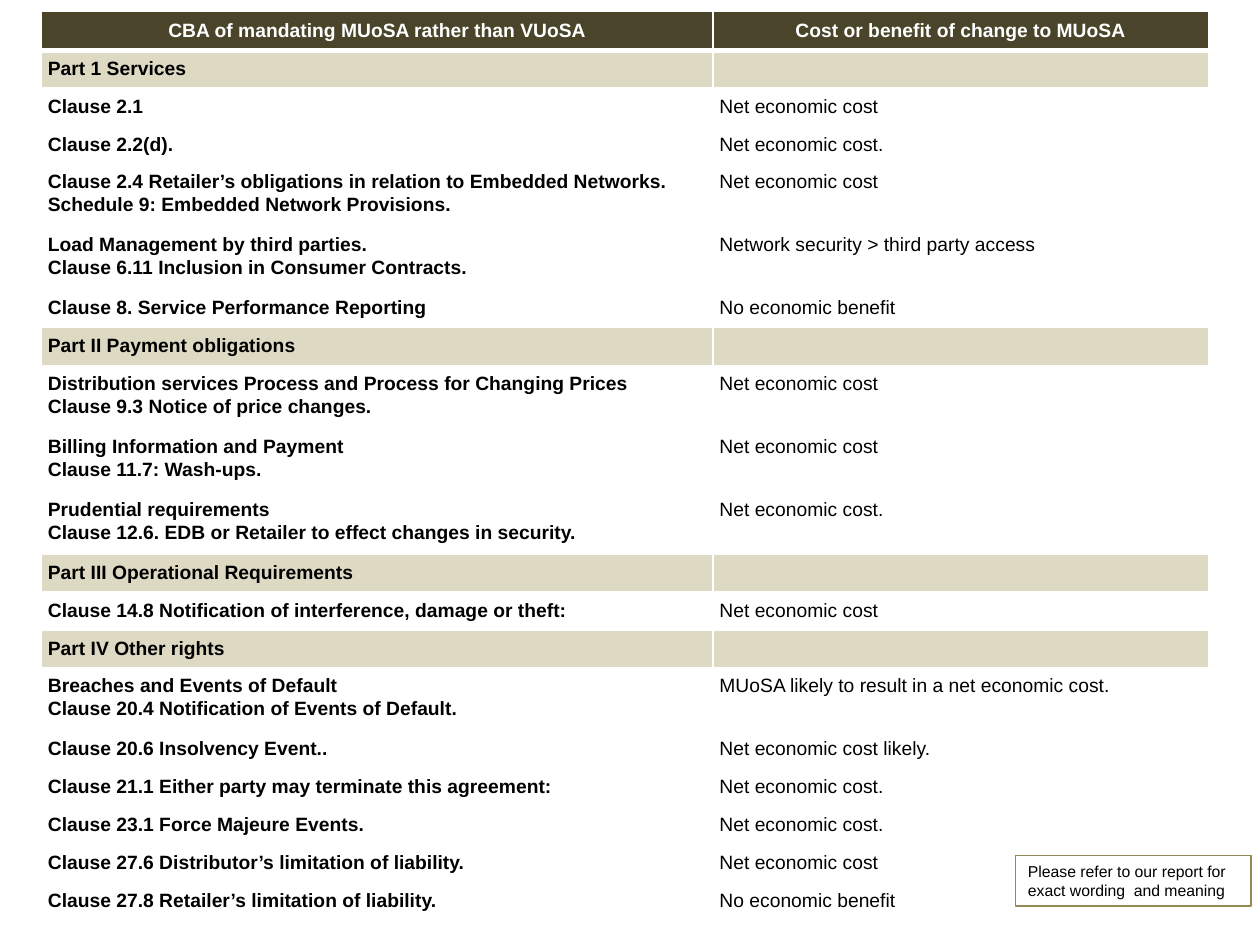
import dataclasses
import typing

import pptx
import pptx.dml.color
import pptx.enum.shapes
import pptx.enum.text
import pptx.oxml.ns
import pptx.util
from lxml import etree

Inches = pptx.util.Inches
Pt = pptx.util.Pt
ALIGN = pptx.enum.text.PP_ALIGN
ANCHOR = pptx.enum.text.MSO_ANCHOR

COLOURS = {
    "header": "4A452A",
    "section": "DDD9C3",
    "white": "FFFFFF",
    "text": "000000",
    "note_line": "948A54",
}
COLUMN_WIDTHS = [5.33, 3.93]
LINE_HEIGHTS = {1: 0.3, 2: 0.5}
HEADER_HEIGHT = 0.31


@dataclasses.dataclass
class Row:
    lines: list[str]
    finding: str = ""
    kind: str = "clause"


@dataclasses.dataclass
class CellStyle:
    fill: str
    text: str = "text"
    bold: bool = True
    align: typing.Any = ALIGN.LEFT
    anchor: typing.Any = ANCHOR.TOP
    bottom_inset: float = 0.05


ROWS = [
    Row(["CBA of mandating MUoSA rather than VUoSA"], "Cost or benefit of change to MUoSA", "header"),
    Row(["Part 1 Services"], kind="section"),
    Row(["Clause 2.1"], "Net economic cost"),
    Row(["Clause 2.2(d)."], "Net economic cost."),
    Row(["Clause 2.4 Retailer’s obligations in relation to Embedded Networks.",
         "Schedule 9: Embedded Network Provisions."], "Net economic cost"),
    Row(["Load Management by third parties.",
         "Clause 6.11 Inclusion in Consumer Contracts."], "Network security > third party access"),
    Row(["Clause 8. Service Performance Reporting"], "No economic benefit"),
    Row(["Part II Payment obligations"], kind="section"),
    Row(["Distribution services Process and Process for Changing Prices",
         "Clause 9.3 Notice of price changes."], "Net economic cost"),
    Row(["Billing Information and Payment", "Clause 11.7: Wash-ups."], "Net economic cost"),
    Row(["Prudential requirements",
         "Clause 12.6. EDB or Retailer to effect changes in security."], "Net economic cost."),
    Row(["Part III Operational Requirements"], kind="section"),
    Row(["Clause 14.8 Notification of interference, damage or theft:"], "Net economic cost"),
    Row(["Part IV Other rights"], kind="section"),
    Row(["Breaches and Events of Default", "Clause 20.4 Notification of Events of Default."],
        "MUoSA likely to result in a net economic cost."),
    Row(["Clause 20.6 Insolvency Event.."], "Net economic cost likely."),
    Row(["Clause 21.1 Either party may terminate this agreement:"], "Net economic cost."),
    Row(["Clause 23.1 Force Majeure Events."], "Net economic cost."),
    Row(["Clause 27.6 Distributor’s limitation of liability."], "Net economic cost"),
    Row(["Clause 27.8 Retailer’s limitation of liability."], "No economic benefit"),
]


def set_all(target: typing.Any, values: dict[str, typing.Any]) -> None:
    for name, value in values.items():
        setattr(target, name, value)


def colour(name: str) -> pptx.dml.color.RGBColor:
    return pptx.dml.color.RGBColor.from_string(COLOURS[name])


def add_span(para: typing.Any, text: str, size: float, shade: str, bold: bool) -> None:
    span = para.add_run()
    span.text = text
    set_all(span.font, {"name": "Arial", "size": Pt(size), "bold": bold})
    span.font.color.rgb = colour(shade)


def add_borders(cell: typing.Any, top: float, bottom: float) -> None:
    qn = pptx.oxml.ns.qn
    properties = cell._tc.get_or_add_tcPr()
    for side, width in {"L": 1, "R": 1, "T": top, "B": bottom}.items():
        line = etree.SubElement(properties, qn(f"a:ln{side}"), w=str(Pt(width)))
        fill = etree.SubElement(line, qn("a:solidFill"))
        etree.SubElement(fill, qn("a:srgbClr"), val=COLOURS["white"])


def fill_cell(cell: typing.Any, lines: list[str], style: CellStyle) -> None:
    set_all(cell, {
        "margin_left": Inches(0.05),
        "margin_right": Inches(0.05),
        "margin_top": Inches(0.05),
        "margin_bottom": Inches(style.bottom_inset),
        "vertical_anchor": style.anchor,
    })
    cell.fill.solid()
    cell.fill.fore_color.rgb = colour(style.fill)
    frame = cell.text_frame
    for index, text in enumerate(lines):
        para = frame.add_paragraph() if index else frame.paragraphs[0]
        set_all(para, {"alignment": style.align, "line_spacing": Pt(13)})
        if text:
            add_span(para, text, 11, style.text, style.bold)
        else:
            etree.SubElement(para._p, pptx.oxml.ns.qn("a:endParaRPr"), sz="1100")


def cell_style(kind: str, column: int) -> CellStyle:
    if kind == "header":
        return CellStyle("header", "white", True, ALIGN.CENTER, ANCHOR.MIDDLE, 0.06)
    if kind == "section":
        return CellStyle("section")
    return CellStyle("white", bold=column == 0)


def add_clause_table(page: typing.Any) -> None:
    heights = [HEADER_HEIGHT if row.kind == "header" else LINE_HEIGHTS[len(row.lines)] for row in ROWS]
    table = page.shapes.add_table(
        len(ROWS), len(COLUMN_WIDTHS), Inches(0.33), Inches(0.09),
        Inches(sum(COLUMN_WIDTHS)), Inches(sum(heights))).table
    for column, width in zip(table.columns, COLUMN_WIDTHS):
        column.width = Inches(width)
    for index, (row, height) in enumerate(zip(ROWS, heights)):
        table.rows[index].height = Inches(height)
        for column, lines in enumerate([row.lines, [row.finding]]):
            cell = table.cell(index, column)
            add_borders(cell, 3 if index == 1 else 1, 3 if index == 0 else 1)
            fill_cell(cell, lines, cell_style(row.kind, column))


def add_note(page: typing.Any, text: str) -> None:
    box = page.shapes.add_shape(
        pptx.enum.shapes.MSO_SHAPE.RECTANGLE, Inches(8.06), Inches(6.79), Inches(1.87), Inches(0.4))
    box.shadow.inherit = False
    box.fill.background()
    box.line.color.rgb = colour("note_line")
    box.line.width = Pt(0.75)
    set_all(box.text_frame, {"word_wrap": True, "vertical_anchor": ANCHOR.TOP})
    para = box.text_frame.paragraphs[0]
    para.alignment = ALIGN.LEFT
    add_span(para, text, 9, "text", False)


def main() -> None:
    deck = pptx.Presentation()
    set_all(deck, {"slide_width": Inches(10), "slide_height": Inches(7.5)})
    page = deck.slides.add_slide(deck.slide_layouts[6])
    add_clause_table(page)
    add_note(page, "Please refer to our report for exact wording  and meaning")
    deck.save("out.pptx")


if __name__ == "__main__":
    main()
